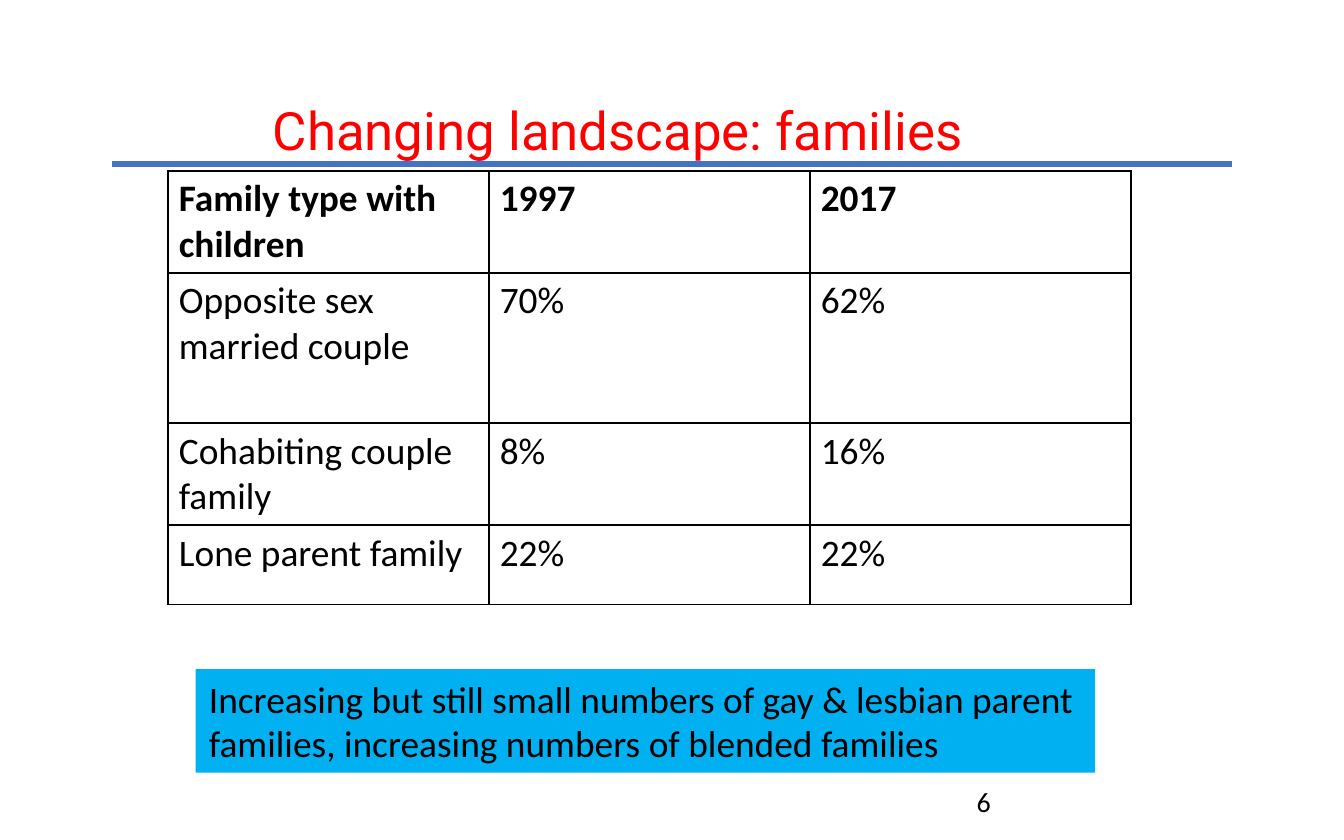
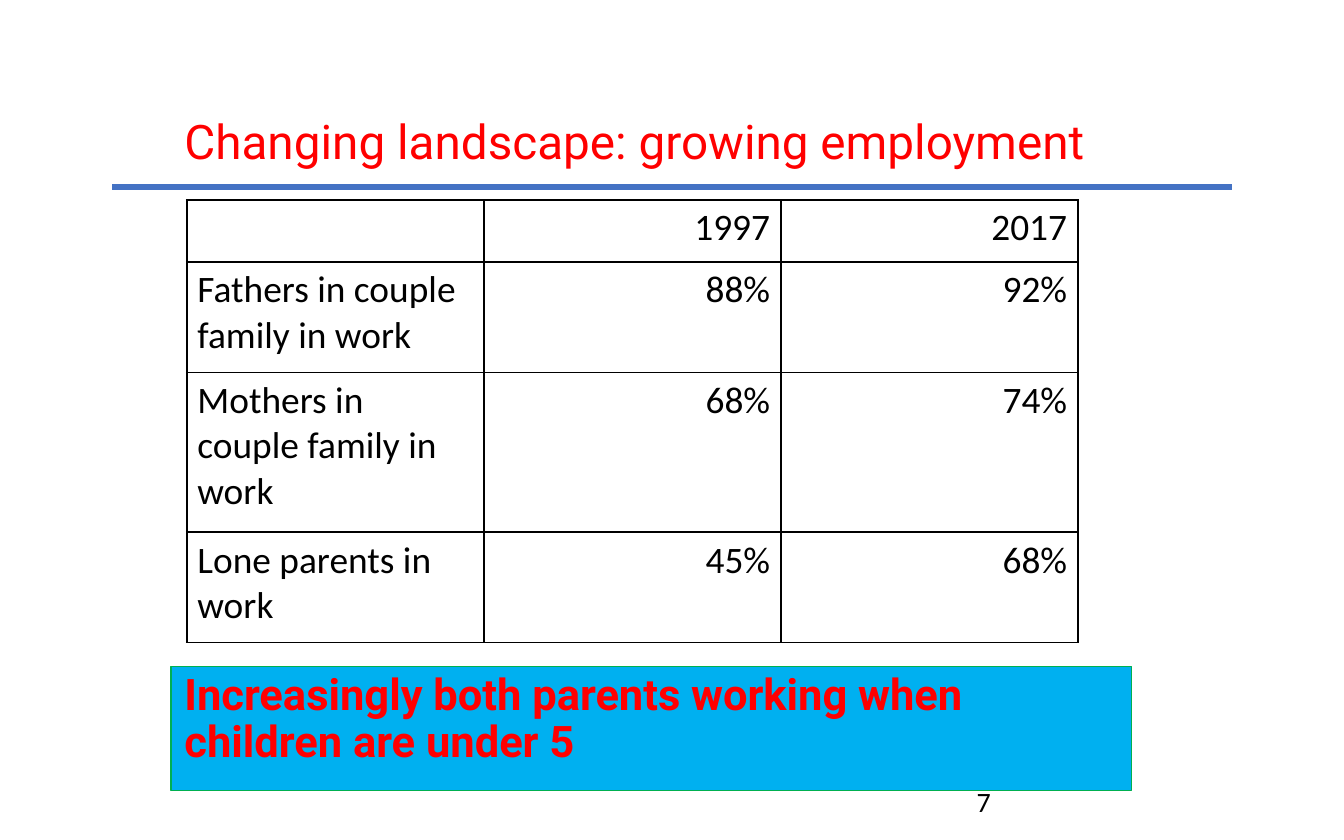
from lxml import etree
from pptx import Presentation
from pptx.dml.color import RGBColor
from pptx.enum import shapes, text
from pptx.oxml import ns
from pptx.util import Cm, Pt

RED = RGBColor(0xFF, 0x00, 0x00)
BLACK = RGBColor(0x00, 0x00, 0x00)
RULE_BLUE = RGBColor(0x44, 0x72, 0xC4)
NOTE_BLUE = RGBColor(0x00, 0xB0, 0xF0)
NOTE_GREEN = RGBColor(0x00, 0xB0, 0x50)

BODY_FONT = {"name": "Calibri", "size": Pt(20), "bold": False}
HEAD_FONT = {**BODY_FONT, "bold": True}
NUMBER_FONT = {**BODY_FONT, "size": Pt(15)}
CALLOUT_FONT = {"name": "Roboto", "size": Pt(23.3), "bold": True}
LEFT, RIGHT = text.PP_ALIGN.LEFT, text.PP_ALIGN.RIGHT


def set_attrs(obj, values):
    for name, value in values.items():
        setattr(obj, name, value)


def place(sp, box):
    set_attrs(sp, dict(zip(("left", "top", "width", "height"), map(Cm, box))))


def write(tf, words, font, color=BLACK, align=LEFT, spacing=None):
    p = tf.paragraphs[0]
    set_attrs(p, {"alignment": align, "line_spacing": spacing, "space_before": Pt(0)})
    r = p.add_run()
    r.text = words
    set_attrs(r.font, font)
    r.font.color.rgb = color
    return p


def set_frame(tf, anchor):
    set_attrs(tf, {"word_wrap": True, "vertical_anchor": anchor,
                   "auto_size": text.MSO_AUTO_SIZE.NONE})


# Title with the rule below it
def add_heading(s, words, box, size, rule_y):
    sp = s.shapes.title
    place(sp, box)
    set_frame(sp.text_frame, text.MSO_ANCHOR.MIDDLE)
    write(sp.text_frame, words, {"name": "Roboto", "size": Pt(size)}, RED, spacing=0.9)
    rule = s.shapes.add_connector(shapes.MSO_CONNECTOR.STRAIGHT,
                                  Cm(2.12), Cm(rule_y), Cm(23.28), Cm(rule_y))
    rule.line.color.rgb = RULE_BLUE
    rule.line.width = Pt(3)
    etree.SubElement(rule._element.spPr, ns.qn("a:effectLst"))


def add_borders(cell):
    tc_pr = cell._tc.get_or_add_tcPr()
    for i, side in enumerate(("lnL", "lnR", "lnT", "lnB")):
        ln = etree.Element(ns.qn(f"a:{side}"), w=str(Pt(1)))
        fill = etree.SubElement(ln, ns.qn("a:solidFill"))
        etree.SubElement(fill, ns.qn("a:srgbClr"), val=str(BLACK))
        tc_pr.insert(i, ln)


# Table with equal columns
def add_grid(s, rows, left, top, width, heights, head_font=BODY_FONT, value_align=LEFT):
    columns = len(rows[0])
    table = s.shapes.add_table(len(rows), columns, Cm(left), Cm(top),
                               Cm(width), Cm(sum(heights))).table
    set_attrs(table, {"first_row": False, "horz_banding": False})
    for column in table.columns:
        column.width = Cm(width / columns)
    for i, (row, height) in enumerate(zip(rows, heights)):
        table.rows[i].height = Cm(height)
        for j, words in enumerate(row):
            cell = table.cell(i, j)
            cell.fill.background()
            add_borders(cell)
            set_attrs(cell, {"margin_left": Cm(0.2), "margin_right": Cm(0.2),
                             "margin_top": Cm(0.1), "margin_bottom": Cm(0.1)})
            if words:
                write(cell.text_frame, words, BODY_FONT if i else head_font,
                      align=value_align if j else LEFT)


def add_page_number(s, number):
    sp = s.shapes.add_textbox(Cm(18.21), Cm(14.71), Cm(5.92), Cm(0.84))
    set_frame(sp.text_frame, text.MSO_ANCHOR.TOP)
    write(sp.text_frame, str(number), NUMBER_FONT)


# Plain note below the families table
def add_note(s, words, box):
    sp = s.shapes.add_shape(shapes.MSO_SHAPE.RECTANGLE, *map(Cm, box))
    sp.shadow.inherit = False
    sp.fill.solid()
    sp.fill.fore_color.rgb = NOTE_BLUE
    sp.line.fill.background()
    set_frame(sp.text_frame, text.MSO_ANCHOR.TOP)
    write(sp.text_frame, words, BODY_FONT)


# Outlined callout in the body placeholder
def add_callout(s, words, box):
    sp = s.placeholders[1]
    place(sp, box)
    sp.fill.solid()
    sp.fill.fore_color.rgb = NOTE_BLUE
    sp.line.color.rgb = NOTE_GREEN
    sp.line.width = Pt(0.75)
    set_frame(sp.text_frame, text.MSO_ANCHOR.TOP)
    p = write(sp.text_frame, words, CALLOUT_FONT, RED, spacing=0.9)
    p_pr = p._p.get_or_add_pPr()
    p_pr.set("marL", "0")
    p_pr.set("indent", "0")
    etree.SubElement(p_pr, ns.qn("a:buNone"))


def add_families_slide(prs):
    s = prs.slides.add_slide(prs.slide_layouts[5])
    add_heading(s, "Changing landscape: families", (4.9, 1.75, 22.86, 1.55), 28.3, 3.1)
    rows = [("Family type with children", "1997", "2017"),
            ("Opposite sex married couple", "70%", "62%"),
            ("Cohabiting couple family", "8%", "16%"),
            ("Lone parent family", "22%", "22%")]
    add_grid(s, rows, 3.18, 3.23, 18.2, (1.92, 2.84, 1.92, 1.5), head_font=HEAD_FONT)
    add_note(s, "Increasing but still small numbers of gay & lesbian parent families, "
                "increasing numbers of blended families", (3.7, 12.65, 17, 1.96))
    add_page_number(s, 6)


def add_employment_slide(prs):
    s = prs.slides.add_slide(prs.slide_layouts[1])
    add_heading(s, "Changing landscape: growing employment",
                (3.23, 2.1, 17.63, 1.25), 25.5, 3.53)
    rows = [("", "1997", "2017"),
            ("Fathers in couple family in work", "88%", "92%"),
            ("Mothers in couple family in work", "68%", "74%"),
            ("Lone parents in work", "45%", "68%")]
    add_grid(s, rows, 3.53, 3.78, 16.84, (1.17, 2.09, 3.02, 2.09), value_align=RIGHT)
    add_callout(s, "Increasingly both parents working when children are under 5",
                (3.23, 12.6, 18.16, 2.34))
    add_page_number(s, 7)


def main():
    prs = Presentation()
    prs.slide_width, prs.slide_height = Cm(25.4), Cm(15.88)
    add_families_slide(prs)
    add_employment_slide(prs)
    prs.save("out.pptx")


if __name__ == "__main__":
    main()
